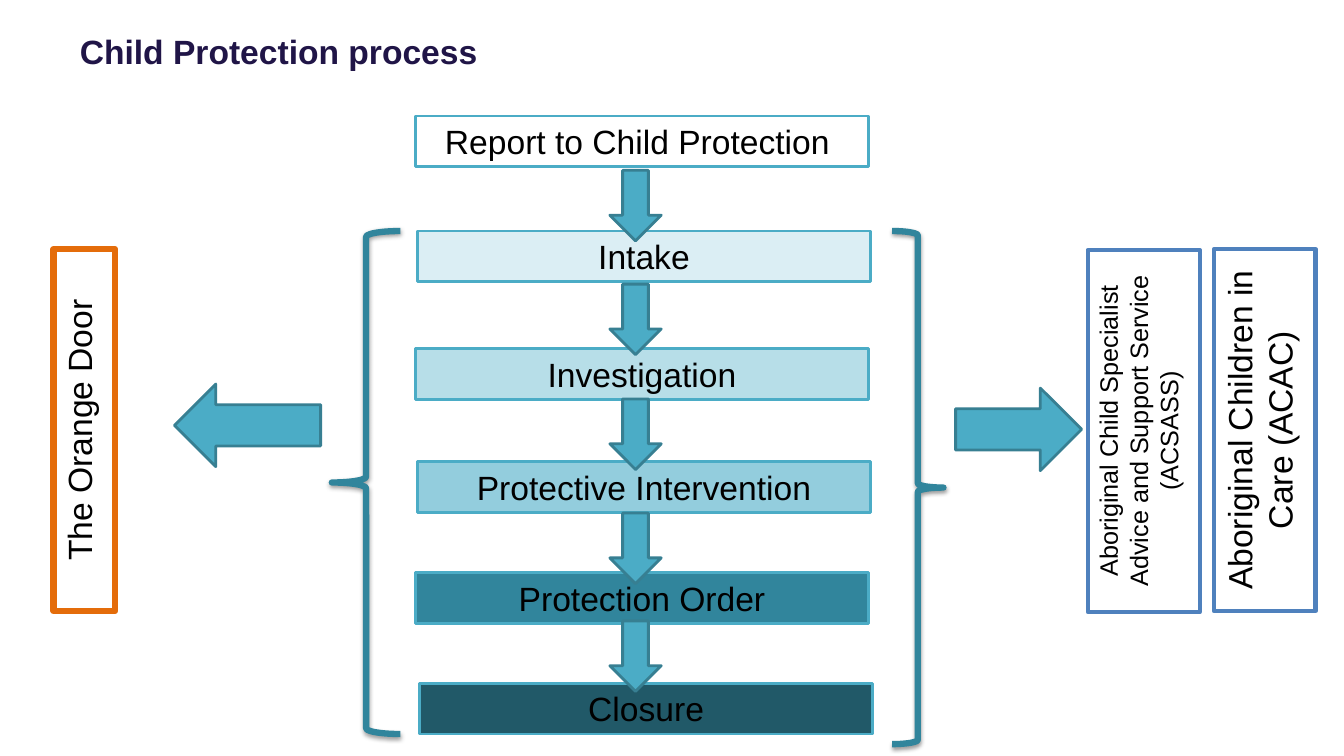
from lxml.etree import SubElement
from pptx import Presentation
from pptx.dml.color import RGBColor
from pptx.enum.shapes import MSO_SHAPE
from pptx.enum.text import MSO_ANCHOR, PP_ALIGN
from pptx.oxml.ns import qn
from pptx.util import Pt

TITLE = "Child Protection process"

# text, left, top, fill
STAGES = [
    ("Report to Child Protection ", 296.6, 82.8, "FFFFFF"),
    ("Intake", 298, 165, "DBEEF4"),
    ("Investigation", 296.6, 249, "B7DEE8"),
    ("Protective Intervention", 298, 329.7, "93CDDD"),
    ("Protection Order", 296.6, 409, "31859C"),
    ("Closure", 299.5, 488, "215968"),
]
STAGE_WIDTH, STAGE_HEIGHT = 324, 36.3

DOWN_ARROW_TOPS = [121.7, 203, 285, 366.5, 443.5]

# text, left, top, width, line colour, line width, font size
SERVICES = [
    ("The Orange Door", 38.2, 178, 44, "E46C0A", 4.5, 24),
    ("Aboriginal Child Specialist Advice and Support Service (ACSASS)",
     777, 178.6, 80, "4F81BD", 3, 18),
    ("Aboriginal Children in Care (ACAC)", 867, 178, 72.7, "4F81BD", 3, 24),
]
SERVICE_HEIGHT = 258.5

# preset, left, top, width, height
SIDE_ARROWS = [
    (MSO_SHAPE.LEFT_ARROW, 124.6, 274.3, 104.4, 59),
    (MSO_SHAPE.RIGHT_ARROW, 682.6, 277.2, 90, 59),
]

# left, top, width, height, rotation
BRACES = [
    (237, 165, 49, 359.3, 0),
    (637.2, 165, 36.7, 366.5, 180),
]


def color(hex_code):
    return RGBColor.from_string(hex_code)


def add_preset(preset, left, top, width, height, fill, line, line_width):
    shape = slide.shapes.add_shape(preset, Pt(left), Pt(top), Pt(width), Pt(height))
    shape.shadow.inherit = False
    if fill:
        shape.fill.solid()
        shape.fill.fore_color.rgb = color(fill)
    else:
        shape.fill.background()
    shape.line.color.rgb = color(line)
    shape.line.width = Pt(line_width)
    return shape


def style_text(frame, text, size, hex_code, align):
    frame.word_wrap = True
    paragraph = frame.paragraphs[0]
    paragraph.text = text
    paragraph.alignment = align
    paragraph.font.name = "Arial"
    paragraph.font.size = Pt(size)
    paragraph.font.color.rgb = color(hex_code)
    return paragraph


def add_box(text, size, *geometry_and_style):
    box = add_preset(MSO_SHAPE.RECTANGLE, *geometry_and_style)
    box.text_frame.vertical_anchor = MSO_ANCHOR.TOP
    style_text(box.text_frame, text, size, "000000", PP_ALIGN.CENTER)
    return box


def add_arrow(preset, left, top, width, height):
    add_preset(preset, left, top, width, height, "4BACC6", "377F92", 2)


def add_soft_shadow(shape):
    effects = shape._element.spPr.find(qn("a:effectLst"))
    shadow = SubElement(effects, qn("a:outerShdw"), blurRad=str(Pt(3.1)),
                        dist=str(Pt(1.6)), dir="5400000", rotWithShape="0")
    black = SubElement(shadow, qn("a:srgbClr"), val="000000")
    SubElement(black, qn("a:alpha"), val="38000")


presentation = Presentation()
presentation.slide_width, presentation.slide_height = Pt(960), Pt(540)
slide = presentation.slides.add_slide(presentation.slide_layouts[6])

title = slide.shapes.add_textbox(Pt(57), Pt(0), Pt(680.4), Pt(70.6)).text_frame
title.margin_left = title.margin_top = title.margin_right = title.margin_bottom = 0
title.vertical_anchor = MSO_ANCHOR.MIDDLE
heading = style_text(title, TITLE, 24, "201547", PP_ALIGN.LEFT)
heading.font.bold = True
heading.line_spacing = 1.1

for text, left, top, fill in STAGES:
    add_box(text, 24, left, top, STAGE_WIDTH, STAGE_HEIGHT, fill, "4BACC6", 2)

for top in DOWN_ARROW_TOPS:
    add_arrow(MSO_SHAPE.DOWN_ARROW, 435.6, top, 36.7, 50.4)

for text, left, top, width, line, line_width, size in SERVICES:
    service = add_box(text, size, left, top, width, SERVICE_HEIGHT,
                      "FFFFFF", line, line_width)
    service.text_frame._txBody.bodyPr.set("vert", "vert270")

for side_arrow in SIDE_ARROWS:
    add_arrow(*side_arrow)

for left, top, width, height, rotation in BRACES:
    brace = add_preset(MSO_SHAPE.LEFT_BRACE, left, top, width, height,
                       None, "31859C", 4.5)
    brace.rotation = rotation
    add_soft_shadow(brace)

presentation.save("out.pptx")
